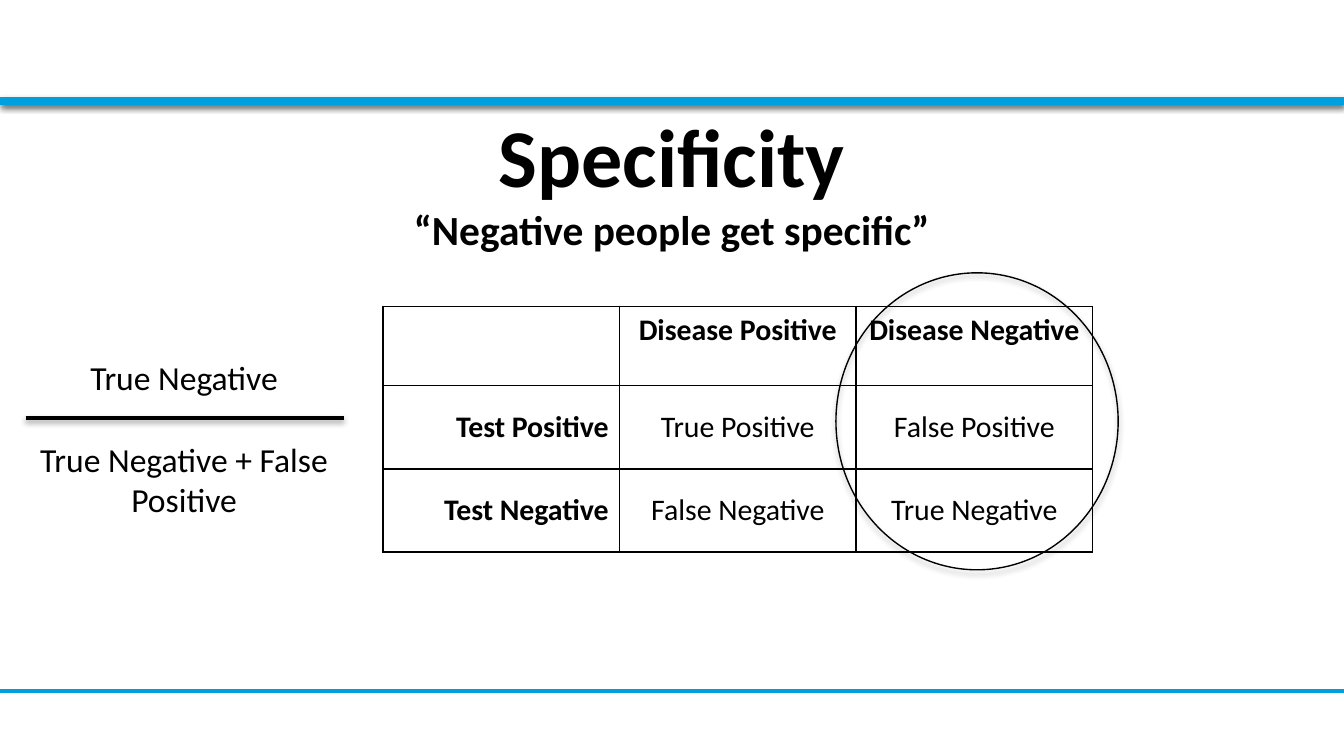
from typing import NamedTuple

from lxml import etree
from pptx import Presentation
from pptx import util as u
from pptx.dml.color import RGBColor
from pptx.enum import shapes, text
from pptx.oxml import ns

BLACK = RGBColor(0x00, 0x00, 0x00)
WHITE = RGBColor(0xFF, 0xFF, 0xFF)
BLUE = RGBColor(0x00, 0xA0, 0xDF)
FONT = "Calibri"
CENTER = text.PP_ALIGN.CENTER
SLIDE_WIDTH = 10
SLIDE_HEIGHT = SLIDE_WIDTH * 9 / 16


class Shadow(NamedTuple):
    opacity: int
    blur: float
    distance: float


class Rule(NamedTuple):
    left: float
    right: float
    y: float
    color: RGBColor
    weight: float
    shadow: Shadow | None = None


SHAPE_SHADOW = Shadow(35, 3.1, 1.8)
LINE_SHADOW = Shadow(38, 3.1, 1.6)

FOOTER_RULE = Rule(0, SLIDE_WIDTH, 5.14, BLUE, 2)
HEADER_RULE = Rule(0, SLIDE_WIDTH, 0.75, BLUE, 4.5, LINE_SHADOW)
FRACTION_BAR = Rule(0.19, 2.56, 3.11, BLACK, 2, LINE_SHADOW)

OUTCOMES = [
    ["", "Disease Positive", "Disease Negative"],
    ["Test Positive", "True Positive", "False Positive"],
    ["Test Negative", "False Negative", "True Negative"],
]
ROW_HEIGHTS = [0.59, 0.62, 0.62]
COLUMN_WIDTH = 1.76


def set_shadow(element, shadow: Shadow | None) -> None:
    """Give a shape or connector its own downward shadow, or none."""
    properties = element.spPr
    effects = properties.find(ns.qn("a:effectLst"))
    if effects is None:
        effects = etree.SubElement(properties, ns.qn("a:effectLst"))
    if shadow:
        outer = etree.SubElement(
            effects, ns.qn("a:outerShdw"),
            blurRad=str(u.Pt(shadow.blur)), dist=str(u.Pt(shadow.distance)),
            dir="5400000", rotWithShape="0")
        color = etree.SubElement(outer, ns.qn("a:srgbClr"), val=str(BLACK))
        etree.SubElement(color, ns.qn("a:alpha"), val=str(shadow.opacity * 1000))


def draw_rule(slide, rule: Rule) -> None:
    line = slide.shapes.add_connector(
        shapes.MSO_CONNECTOR.STRAIGHT, u.Inches(rule.left), u.Inches(rule.y),
        u.Inches(rule.right), u.Inches(rule.y))
    line.line.color.rgb = rule.color
    line.line.width = u.Pt(rule.weight)
    set_shadow(line._element, rule.shadow)


def draw_shape(slide, kind, left: float, top: float, width: float, height: float):
    shape = slide.shapes.add_shape(
        kind, u.Inches(left), u.Inches(top), u.Inches(width), u.Inches(height))
    shape.shadow.inherit = False
    set_shadow(shape._element, SHAPE_SHADOW)
    return shape


def add_text_frame(slide, left: float, top: float, width: float, height: float):
    frame = slide.shapes.add_textbox(
        u.Inches(left), u.Inches(top), u.Inches(width), u.Inches(height)).text_frame
    frame.word_wrap = True
    return frame


def format_font(font, size: float, bold: bool = False) -> None:
    font.name, font.size, font.bold = FONT, u.Pt(size), bold
    font.color.rgb = BLACK


def set_borders(cell) -> None:
    properties = cell._tc.get_or_add_tcPr()
    for side in ("lnL", "lnR", "lnT", "lnB"):
        border = etree.SubElement(properties, ns.qn(f"a:{side}"), w=str(u.Pt(1)))
        fill = etree.SubElement(border, ns.qn("a:solidFill"))
        etree.SubElement(fill, ns.qn("a:srgbClr"), val=str(BLACK))


def draw_outcome_table(slide) -> None:
    table = slide.shapes.add_table(
        len(OUTCOMES), len(OUTCOMES[0]), u.Inches(2.85), u.Inches(2.28),
        u.Inches(COLUMN_WIDTH * len(OUTCOMES[0])), u.Inches(1.84)).table
    table.first_row = table.horz_banding = False
    for column in table.columns:
        column.width = u.Inches(COLUMN_WIDTH)
    for r, (labels, height) in enumerate(zip(OUTCOMES, ROW_HEIGHTS)):
        table.rows[r].height = u.Inches(height)
        for c, label in enumerate(labels):
            cell = table.cell(r, c)
            set_borders(cell)
            cell.fill.background()
            cell.margin_left = cell.margin_right = u.Inches(0.08)
            cell.margin_top = cell.margin_bottom = u.Inches(0.04)
            cell.vertical_anchor = text.MSO_ANCHOR.MIDDLE if r else text.MSO_ANCHOR.TOP
            paragraph = cell.text_frame.paragraphs[0]
            paragraph.text = label
            paragraph.alignment = CENTER if c else text.PP_ALIGN.RIGHT
            for run in paragraph.runs:
                format_font(run.font, 16, bold=r == 0 or c == 0)


def draw_title(slide) -> None:
    frame = add_text_frame(slide, 0.5, 0.69, 9, 1.29)
    frame.vertical_anchor = text.MSO_ANCHOR.MIDDLE
    heading = frame.paragraphs[0]
    heading.text = "Specificity\v“Negative people get specific”"
    heading.alignment = CENTER
    for run, size in zip(heading.runs, (44, 22.2)):
        format_font(run.font, size, bold=True)


def draw_fraction(slide) -> None:
    frame = add_text_frame(slide, 0.19, 2.61, 2.36, 1.31)
    numerator, denominator = frame.paragraphs[0], frame.add_paragraph()
    numerator.text = "True Negative"
    denominator.text = "True Negative + False Positive"
    denominator.space_before = u.Pt(22)
    for term in (numerator, denominator):
        term.alignment = CENTER
        for run in term.runs:
            format_font(run.font, 18)
    draw_rule(slide, FRACTION_BAR)


def main() -> None:
    deck = Presentation()
    deck.slide_width = u.Inches(SLIDE_WIDTH)
    deck.slide_height = u.Inches(SLIDE_HEIGHT)
    slide = deck.slides.add_slide(deck.slide_layouts[6])

    # Header band and rules
    band = draw_shape(slide, shapes.MSO_SHAPE.RECTANGLE, 0, 0, SLIDE_WIDTH, 0.77)
    band.fill.solid()
    band.fill.fore_color.rgb = WHITE
    band.line.fill.background()
    draw_rule(slide, FOOTER_RULE)
    draw_rule(slide, HEADER_RULE)

    # Title and outcome table
    draw_title(slide)
    draw_outcome_table(slide)

    # Ring around the disease-negative column
    ring = draw_shape(slide, shapes.MSO_SHAPE.OVAL, 6.22, 2.03, 2.1, 2.21)
    ring.fill.background()
    ring.line.color.rgb = BLACK
    ring.line.width = u.Pt(0.75)

    # Specificity formula
    draw_fraction(slide)

    deck.save("out.pptx")


if __name__ == "__main__":
    main()
